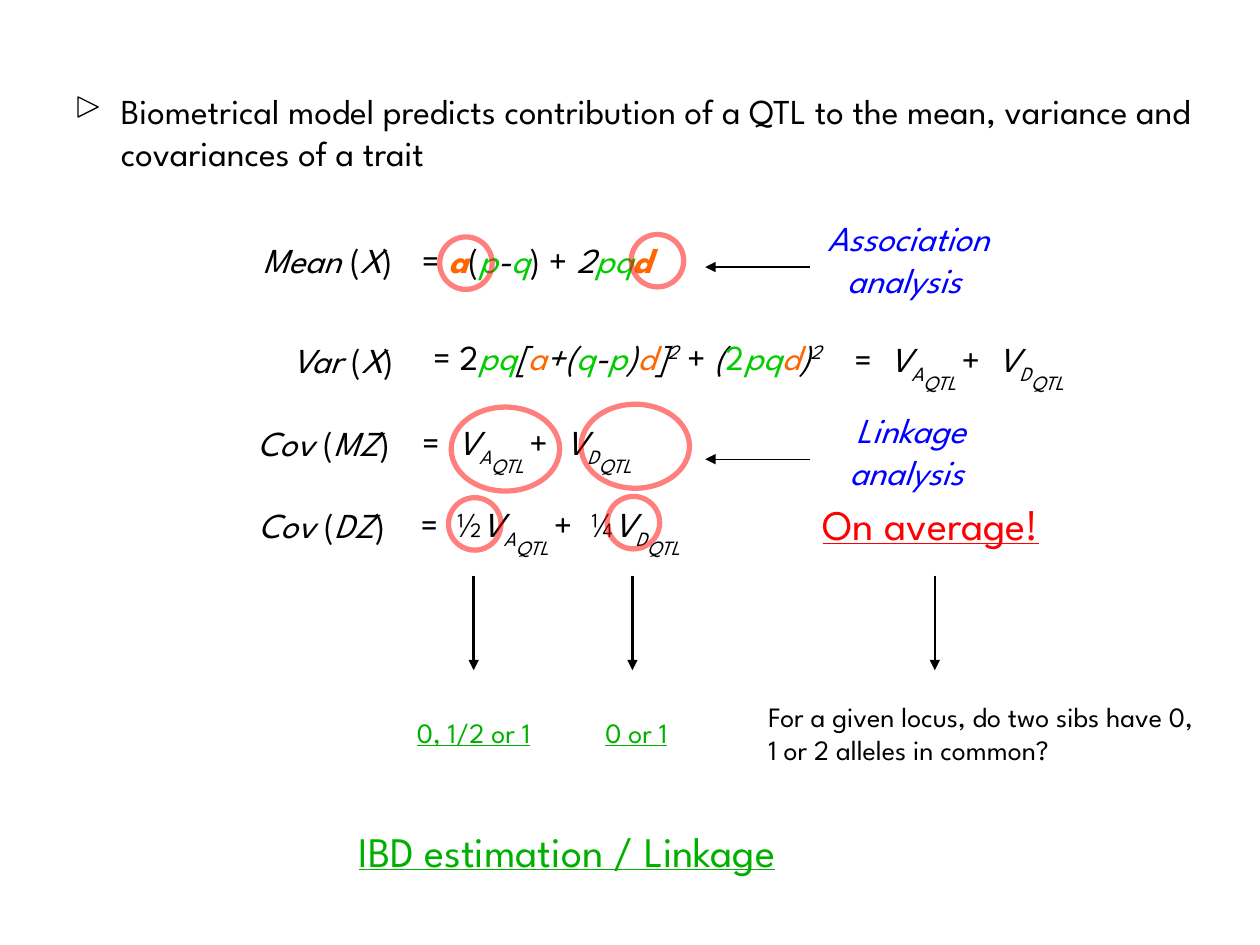
from dataclasses import dataclass
from typing import NamedTuple

from lxml.etree import SubElement
from pptx import Presentation
from pptx.dml.color import RGBColor
from pptx.enum.shapes import MSO_CONNECTOR as Connector, MSO_SHAPE as Preset
from pptx.enum.text import MSO_AUTO_SIZE as AutoSize, PP_ALIGN as Align
from pptx.oxml.ns import qn
from pptx.util import Pt

FONT = "League Spartan"
COLORS = {
    "black": "000000",
    "white": "FFFFFF",
    "red": "FF0000",
    "blue": "0000FF",
    "green": "00B000",    # IBD notes
    "allele": "00CC00",   # allele frequencies p and q
    "effect": "FF6600",   # genotypic effects a and d
}
SPACE = 5  # width of one word space at 20 pt


class Span(NamedTuple):
    text: str
    color: str = "black"
    italic: bool = True
    bold: bool = False
    baseline: int = 0
    spacing: float = 0


@dataclass
class Text:
    left: float
    top: float
    width: float
    height: float
    spans: list[Span]
    size: float = 20
    align: Align = Align.LEFT
    wrap: bool = True
    underline: bool = False
    indent: float = 0


class Ring(NamedTuple):
    left: float
    top: float
    width: float = 30
    height: float = 30


class Arrow(NamedTuple):
    start: tuple[float, float]
    end: tuple[float, float]
    weight: float


def rgb(name: str) -> RGBColor:
    return RGBColor.from_string(COLORS[name])


def upright(text: str, color: str = "black") -> Span:
    return Span(text, color, italic=False)


def label(name: str, argument: str, left: float, top: float, width: float) -> Text:
    """Left side of an equation, such as Mean (X)."""
    spans = [Span(name), upright(" ("), Span(argument), upright(")")]
    return Text(left, top, width, 31, spans, align=Align.CENTER, wrap=False)


def components(left: float, top: float, additive: str = "", dominance: str = "") -> Text:
    """Sum of the additive and dominance variances of the QTL."""
    gap = Span(" ", italic=False, spacing=SPACE)

    def variance(kind: str, ending: str = "") -> list[Span]:
        return [Span("V"), Span(kind, baseline=-25), Span("QTL" + ending, baseline=-50)]

    spans = [upright("="), gap]
    spans += [upright(additive)] if additive else []
    spans += variance("A", " ") + [upright("+"), gap]
    spans += [upright(dominance)] if dominance else []
    return Text(left, top, 237.6, 47, spans + variance("D"), indent=SPACE)


def add_text(page, item: Text) -> None:
    box = page.shapes.add_textbox(Pt(item.left), Pt(item.top), Pt(item.width), Pt(item.height))
    frame = box.text_frame
    frame.word_wrap = item.wrap
    frame.auto_size = AutoSize.SHAPE_TO_FIT_TEXT
    frame.margin_left = Pt(7.2 + item.indent)
    para = frame.paragraphs[0]
    para.alignment = item.align
    para.font.name, para.font.size = FONT, Pt(item.size)
    if item.underline:
        para.font.underline = True
    shared = len({(span.color, span.italic, span.bold) for span in item.spans}) == 1
    for span in item.spans:
        run = para.add_run()
        run.text = span.text
        font = para.font if shared else run.font
        font.color.rgb = rgb(span.color)
        font.italic, font.bold = span.italic, span.bold
        properties = run._r.get_or_add_rPr()
        if span.baseline:
            properties.set("baseline", str(span.baseline * 1000))
        if span.spacing:
            properties.set("spc", str(round(span.spacing * 100)))


def add_outline(page, preset: Preset, place: Ring, color: str, weight: float):
    shape = page.shapes.add_shape(preset, *map(Pt, place))
    shape.shadow.inherit = False
    shape.fill.background()
    shape.line.color.rgb = rgb(color)
    shape.line.width = Pt(weight)
    return shape


def add_ring(page, ring: Ring) -> None:
    shape = add_outline(page, Preset.OVAL, ring, "red", 3)
    color = shape.line._ln.find(".//" + qn("a:srgbClr"))
    SubElement(color, qn("a:alpha"), val="50000")


def add_arrow(page, arrow: Arrow) -> None:
    line = page.shapes.add_connector(
        Connector.STRAIGHT, *map(Pt, arrow.start), *map(Pt, arrow.end))
    line.line.color.rgb = rgb("black")
    line.line.width = Pt(arrow.weight)
    SubElement(line.line._ln, qn("a:tailEnd"), type="triangle")
    SubElement(line._element.spPr, qn("a:effectLst"))


p, q = Span("p", "allele"), Span("q", "allele")
pq = Span("pq", "allele")
a, d = Span("a", "effect"), Span("d", "effect")
minus, squared = Span("-"), Span("2", baseline=30)

MEAN = [upright("= "), a._replace(bold=True), upright("("), p, minus, q,
        upright(") + "), Span("2"), pq, d._replace(bold=True)]
VARIANCE = [upright("= 2"), pq, Span("["), a, Span("+("), q, minus, p, Span(")"), d,
            Span("]"), squared, upright(" + "), Span("("), upright("2", "allele"), pq, d,
            Span(")"), squared]

TEXTS = [
    Text(62, 47.5, 628, 55.5, [upright(
        "Biometrical model predicts contribution of a QTL to the mean, "
        "variance and covariances of a trait")]),
    # Equations
    label("Mean", "X", 139, 132.5, 96.5),
    Text(234, 132.5, 203.8, 31, MEAN),
    label("Var", "X", 157, 190, 77.8),
    Text(234, 188, 249, 31.7, VARIANCE, align=Align.CENTER, wrap=False),
    components(476, 189.4),
    label("Cov", "MZ", 136, 237.6, 98),
    components(229, 237),
    label("Cov", "DZ", 136, 284.4, 95.8),
    components(228.2, 283.7, "½", "¼"),
    # Kinds of analysis
    Text(453.6, 120.2, 131, 55.4, [Span("Association analysis ", "blue")], align=Align.CENTER),
    Text(455, 229.7, 131, 55.4, [Span("Linkage analysis ", "blue")], align=Align.CENTER),
    # Allele sharing
    Text(463, 281.5, 150, 36, [upright("On average!", "red")], 24, underline=True),
    Text(213.8, 405.4, 113.8, 26.6, [upright("0, 1/2 or 1", "green")], 16,
         Align.CENTER, underline=True),
    Text(306.7, 405.4, 113.8, 26.6, [upright("0 or 1", "green")], 16,
         Align.CENTER, underline=True),
    Text(432, 396, 257.8, 46, [upright(
        "For a given locus, do two sibs have 0, 1 or 2 alleles in common?")], 16),
    Text(180, 468, 288, 36, [upright("IBD estimation / Linkage", "green")], 24,
         Align.CENTER, underline=True),
]
RINGS = [
    Ring(251.3, 135.4), Ring(360.7, 134),
    Ring(257.8, 232.6, 62, 48), Ring(332, 231, 62, 48),
    Ring(256.3, 284.4), Ring(347, 283.7),
]
ARROWS = [Arrow((x, 329), (x, 383), 1.5) for x in (270.7, 361.4, 534.2)]
ARROWS += [Arrow((463, y), (403, y), 0.75) for y in (152.6, 262.4)]


def main() -> None:
    deck = Presentation()
    deck.slide_width, deck.slide_height = Pt(720), Pt(540)
    page = deck.slides.add_slide(deck.slide_layouts[6])
    page.background.fill.solid()
    page.background.fill.fore_color.rgb = rgb("white")

    # Text and its triangle bullet
    for item in TEXTS:
        add_text(page, item)
    bullet = add_outline(page, Preset.ISOSCELES_TRIANGLE, Ring(44.6, 55.4, 11.5, 11.5),
                         "black", 0.75)
    bullet.rotation = 90

    # Rings around the key terms, and the arrows
    for ring in RINGS:
        add_ring(page, ring)
    for arrow in ARROWS:
        add_arrow(page, arrow)

    deck.save("out.pptx")


if __name__ == "__main__":
    main()
